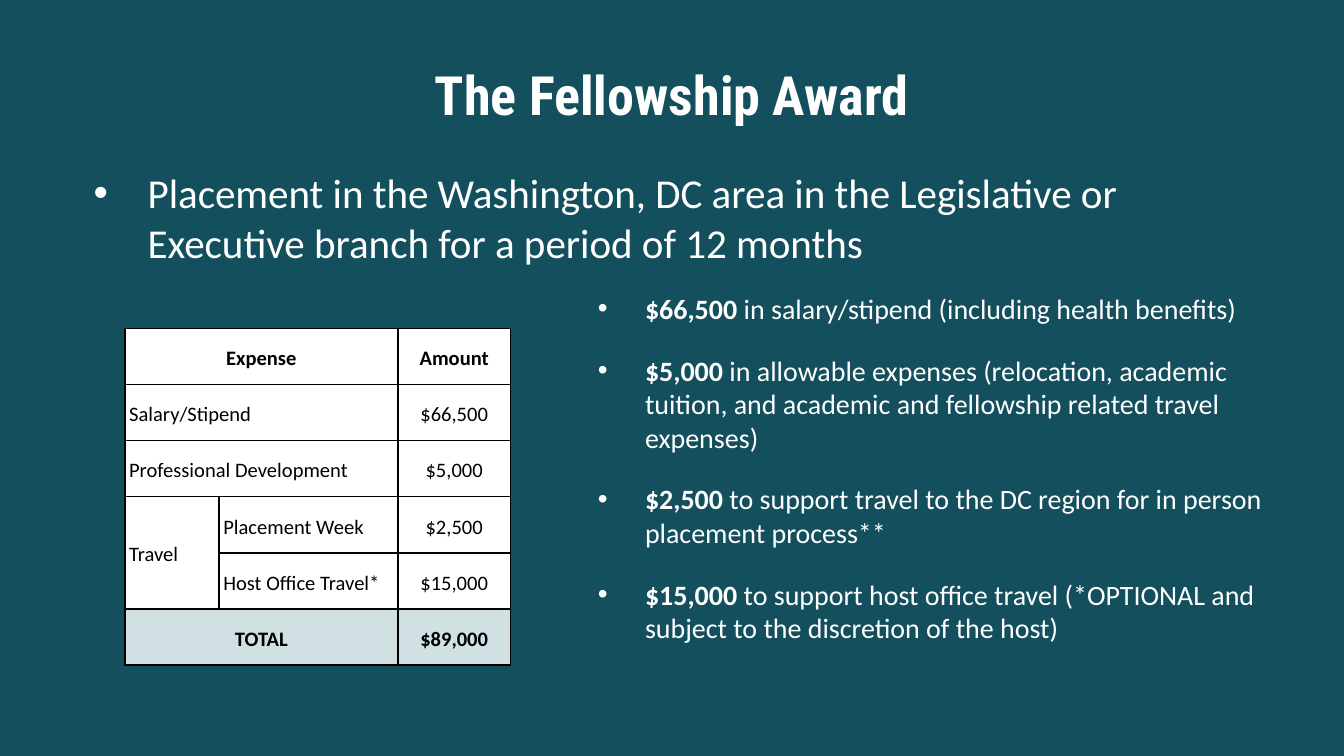
"""Build the Fellowship Award slide with its expense table and bullet lists."""
from dataclasses import dataclass

import lxml.etree
import pptx
import pptx.dml.color
import pptx.enum.text
import pptx.oxml
import pptx.oxml.ns
import pptx.util

Cm = pptx.util.Cm
Pt = pptx.util.Pt
Align = pptx.enum.text.PP_ALIGN
Anchor = pptx.enum.text.MSO_ANCHOR

WHITE, BLACK, TEAL, PALE = "FFFFFF", "000000", "134F5C", "D0E0E3"
BODY_FONT = "Calibri"
ROW_HEIGHT = 1.06
COLUMNS = (1.78, 3.38, 2.13)


@dataclass
class Box:
    left: float
    top: float
    width: float
    height: float


@dataclass
class Bullet:
    lead: str
    rest: str


@dataclass
class Entry:
    row: int
    col: int
    text: str
    rows: int = 1
    cols: int = 1


BULLETS = (
    Bullet("$66,500", " in salary/stipend (including health benefits)"),
    Bullet("$5,000", " in allowable expenses (relocation, academic tuition, "
           "and academic and fellowship related travel expenses)"),
    Bullet("$2,500", " to support travel to the DC region for in person placement process**"),
    Bullet("$15,000 ", "to support host office travel (*OPTIONAL and subject to "
           "the discretion of the host)"),
)
AMOUNTS = ("Amount", "$66,500", "$5,000", "$2,500", "$15,000", "$89,000")
ENTRIES = (
    Entry(0, 0, "Expense", cols=2),
    Entry(1, 0, "Salary/Stipend", cols=2),
    Entry(2, 0, "Professional Development", cols=2),
    Entry(3, 0, "Travel", rows=2),
    Entry(3, 1, "Placement Week"),
    Entry(4, 1, "Host Office Travel*"),
    Entry(5, 0, "TOTAL", cols=2),
    *(Entry(i, 2, amount) for i, amount in enumerate(AMOUNTS)),
)


def rgb(color: str) -> pptx.dml.color.RGBColor:
    return pptx.dml.color.RGBColor.from_string(color)


def style(font, size: float, color: str, bold: bool = False, name: str = BODY_FONT) -> None:
    font.name, font.size, font.bold = name, Pt(size), bold
    font.color.rgb = rgb(color)


def place(sp, box: Box, anchor) -> None:
    sp.left, sp.top = Cm(box.left), Cm(box.top)
    sp.width, sp.height = Cm(box.width), Cm(box.height)
    tf = sp.text_frame
    tf.word_wrap = True
    tf.auto_size = pptx.enum.text.MSO_AUTO_SIZE.NONE
    tf.vertical_anchor = anchor
    tf.margin_left = tf.margin_right = tf.margin_top = tf.margin_bottom = Cm(0.25)


def add_bullets(sp, bullets: tuple[Bullet, ...], size: float, hanging: float, gap: float) -> None:
    tf = sp.text_frame
    for i, bullet in enumerate(bullets):
        p = tf.add_paragraph() if i else tf.paragraphs[0]
        pPr = p._p.get_or_add_pPr()
        pPr.set("marL", str(Cm(1.27)))
        pPr.set("indent", str(-Cm(hanging)))
        ns = pptx.oxml.ns.nsdecls("a")
        for xml in (f'<a:buClr {ns}><a:srgbClr val="{WHITE}"/></a:buClr>',
                    f'<a:buFont {ns} typeface="Arial"/>',
                    f'<a:buChar {ns} char="•"/>'):
            pPr.append(pptx.oxml.parse_xml(xml))
        p.alignment = Align.LEFT
        p.space_before = Pt(gap if i else 0)
        for text, bold in ((bullet.lead, True), (bullet.rest, False)):
            if text:
                r = p.add_run()
                r.text = text
                style(r.font, size, WHITE, bold)


def add_borders(cell) -> None:
    tcPr = cell._tc.get_or_add_tcPr()
    for side in ("lnL", "lnR", "lnT", "lnB"):
        ln = lxml.etree.SubElement(tcPr, pptx.oxml.ns.qn(f"a:{side}"), w=str(Pt(0.83)))
        fill = lxml.etree.SubElement(ln, pptx.oxml.ns.qn("a:solidFill"))
        lxml.etree.SubElement(fill, pptx.oxml.ns.qn("a:srgbClr"), val=BLACK)


def add_expenses(s, left: float, top: float) -> None:
    rows = len(AMOUNTS)
    tbl = s.shapes.add_table(rows, len(COLUMNS), Cm(left), Cm(top),
                             Cm(sum(COLUMNS)), Cm(ROW_HEIGHT * rows)).table
    tbl.first_row = tbl.horz_banding = False
    for column, width in zip(tbl.columns, COLUMNS):
        column.width = Cm(width)
    for i, row in enumerate(tbl.rows):
        row.height = Cm(ROW_HEIGHT)
        for cell in row.cells:
            add_borders(cell)
            cell.fill.solid()
            cell.fill.fore_color.rgb = rgb(PALE if i == rows - 1 else WHITE)
    for entry in ENTRIES:
        cell = tbl.cell(entry.row, entry.col)
        if entry.rows > 1 or entry.cols > 1:
            cell.merge(tbl.cell(entry.row + entry.rows - 1, entry.col + entry.cols - 1))
        cell.margin_left = cell.margin_right = Cm(0.08)
        cell.margin_top = cell.margin_bottom = Cm(0.25)
        cell.vertical_anchor = Anchor.MIDDLE if entry.rows > 1 else Anchor.BOTTOM
        strong = entry.row in (0, rows - 1)
        p = cell.text_frame.paragraphs[0]
        p.text = entry.text
        p.alignment = Align.CENTER if strong or entry.col == 2 else Align.LEFT
        p.line_spacing = 1.15
        style(p.runs[0].font, 11, BLACK, strong)


def main() -> None:
    prs = pptx.Presentation()
    prs.slide_width, prs.slide_height = Cm(25.4), Cm(14.29)
    s = prs.slides.add_slide(prs.slide_layouts[3])
    s.background.fill.solid()
    s.background.fill.fore_color.rgb = rgb(TEAL)

    title, placement, awards = s.placeholders
    place(title, Box(1.27, 0.58, 22.86, 2.39), Anchor.MIDDLE)
    title.text_frame.text = "The Fellowship Award"
    p = title.text_frame.paragraphs[0]
    p.alignment = Align.CENTER
    style(p.runs[0].font, 29, WHITE, True, "Roboto Condensed")

    place(placement, Box(1.27, 2.92, 22.86, 2.16), Anchor.TOP)
    add_bullets(placement, (Bullet("", "Placement in the Washington, DC area in the Legislative "
                                   "or Executive branch for a period of 12 months"),), 22, 1.02, 0)
    place(awards, Box(10.67, 5.26, 13.51, 8.15), Anchor.TOP)
    add_bullets(awards, BULLETS, 15, 0.89, 15)
    add_expenses(s, 2.36, 6.21)
    prs.save("out.pptx")


if __name__ == "__main__":
    main()
